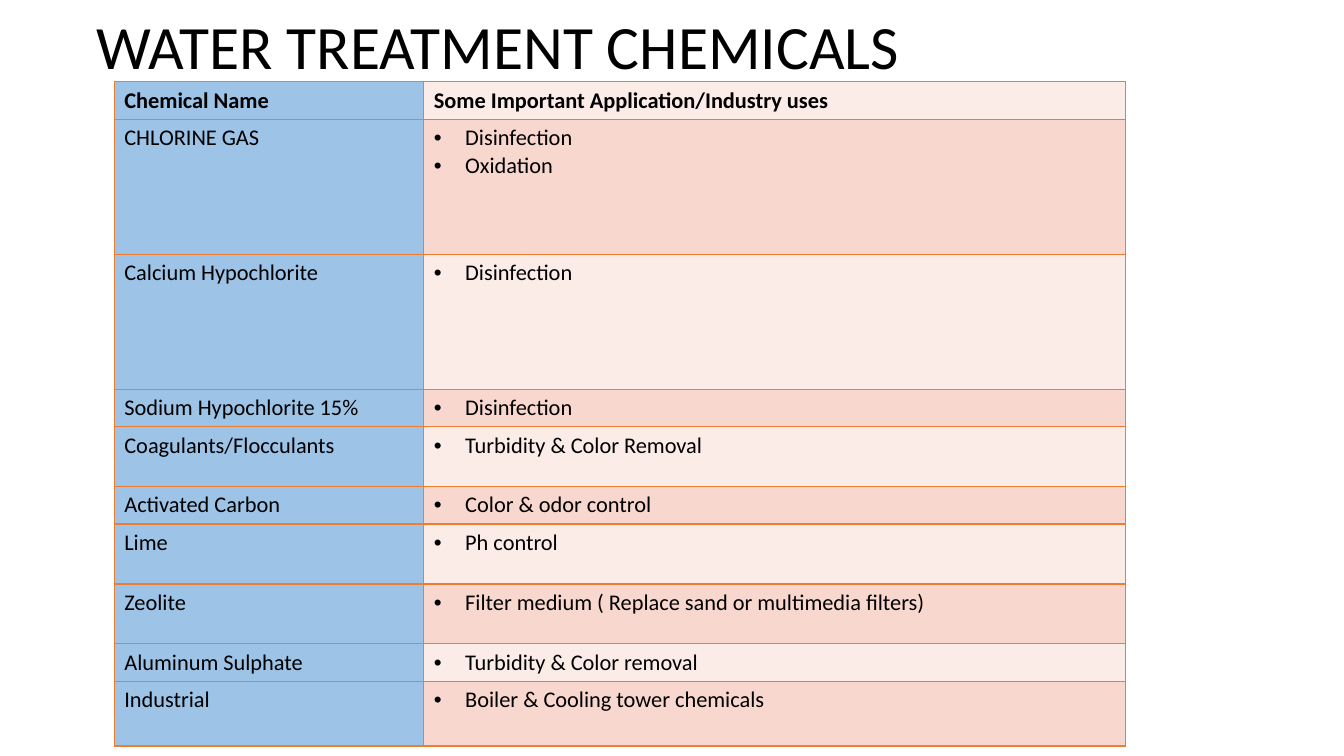
from lxml import etree
from pptx import Presentation
from pptx import util as u
from pptx.dml.color import RGBColor
from pptx.enum import text
from pptx.oxml import ns

FONT = "Calibri"
BLACK = RGBColor(0x00, 0x00, 0x00)
BLUE = RGBColor(0x9D, 0xC3, 0xE6)
PINK = RGBColor(0xF8, 0xD7, 0xCE)
PALE = RGBColor(0xFC, 0xEC, 0xE8)
ORANGE = RGBColor(0xED, 0x7D, 0x31)

# Row heights in cm
LINE, MEDIUM, LAST, TALL = 0.94, 1.51, 1.63, 3.4
COL_WIDTHS = (7.8, 17.68)
HEADER = ("Chemical Name", "Some Important Application/Industry uses")
CHEMICALS = [
    ("CHLORINE GAS", ["Disinfection", "Oxidation"], TALL),
    ("Calcium Hypochlorite", ["Disinfection"], TALL),
    ("Sodium Hypochlorite 15%", ["Disinfection"], LINE),
    ("Coagulants/Flocculants", ["Turbidity & Color Removal"], MEDIUM),
    ("Activated Carbon", ["Color & odor control"], LINE),
    ("Lime", ["Ph control"], MEDIUM),
    ("Zeolite", ["Filter medium ( Replace sand or multimedia filters)"], MEDIUM),
    ("Aluminum Sulphate", ["Turbidity & Color removal"], LINE),
    ("Industrial", ["Boiler & Cooling tower chemicals"], LAST),
]


def write(p, txt, size=16, bold=False, bullet=False):
    if bullet:
        pPr = p._p.get_or_add_pPr()
        pPr.set("marL", str(u.Cm(0.79)))
        pPr.set("indent", str(-u.Cm(0.79)))
        etree.SubElement(pPr, ns.qn("a:buFont")).set("typeface", "Arial")
        etree.SubElement(pPr, ns.qn("a:buChar")).set("char", "•")
    r = p.add_run()
    r.text = txt
    r.font.name, r.font.size, r.font.bold = FONT, u.Pt(size), bold
    r.font.color.rgb = BLACK


def style_cell(cell, fill):
    # Borders go before the fill in the cell properties
    tcPr = cell._tc.get_or_add_tcPr()
    for side in ("lnL", "lnR", "lnT", "lnB"):
        ln = etree.SubElement(tcPr, ns.qn(f"a:{side}"), w=str(u.Pt(1)))
        solid = etree.SubElement(ln, ns.qn("a:solidFill"))
        etree.SubElement(solid, ns.qn("a:srgbClr"), val=str(ORANGE))
    cell.fill.solid()
    cell.fill.fore_color.rgb = fill


def add_title(s, left, top, width, height):
    sp = s.shapes.title
    sp.left, sp.top, sp.width, sp.height = map(u.Cm, (left, top, width, height))
    tf = sp.text_frame
    tf.word_wrap = True
    tf.auto_size = text.MSO_AUTO_SIZE.NONE
    tf.vertical_anchor = text.MSO_ANCHOR.MIDDLE
    p = tf.paragraphs[0]
    p.alignment = text.PP_ALIGN.LEFT
    p.line_spacing = 0.9
    write(p, "WATER TREATMENT CHEMICALS", size=44)


def add_chemicals(s, left, top):
    heights = [LINE] + [height for _, _, height in CHEMICALS]
    frame = s.shapes.add_table(len(heights), len(COL_WIDTHS), u.Cm(left), u.Cm(top),
                               u.Cm(sum(COL_WIDTHS)), u.Cm(sum(heights)))
    tbl = frame.table
    tbl.first_row = tbl.horz_banding = False
    for col, width in zip(tbl.columns, COL_WIDTHS):
        col.width = u.Cm(width)
    for i, height in enumerate(heights):
        tbl.rows[i].height = u.Cm(height)
        style_cell(tbl.cell(i, 0), BLUE)
        style_cell(tbl.cell(i, 1), PINK if i % 2 else PALE)

    # Header row
    for j, label in enumerate(HEADER):
        write(tbl.cell(0, j).text_frame.paragraphs[0], label, bold=True)

    # Chemicals and their uses
    for i, (name, uses, _) in enumerate(CHEMICALS, 1):
        write(tbl.cell(i, 0).text_frame.paragraphs[0], name)
        tf = tbl.cell(i, 1).text_frame
        for k, use in enumerate(uses):
            p = tf.add_paragraph() if k else tf.paragraphs[0]
            write(p, use, bullet=True)


def main():
    prs = Presentation()
    prs.slide_width, prs.slide_height = u.Cm(33.87), u.Cm(19.05)
    s = prs.slides.add_slide(prs.slide_layouts[5])
    add_title(s, 2.18, 0, 29.21, 2.49)
    add_chemicals(s, 2.88, 2.06)
    prs.save("out.pptx")


if __name__ == "__main__":
    main()
